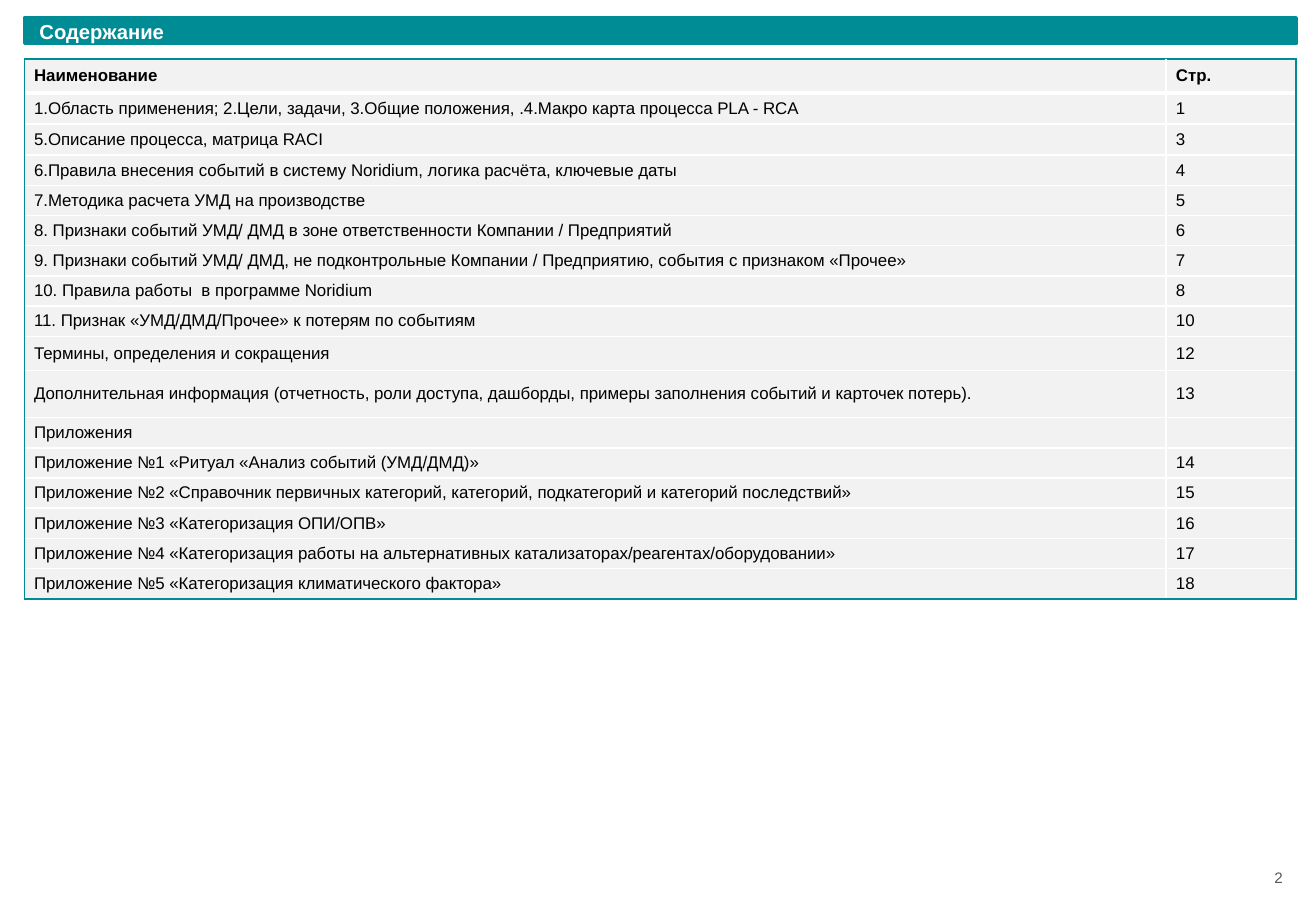
from typing import NamedTuple

from lxml.etree import SubElement
from pptx import Presentation
from pptx.dml.color import RGBColor
from pptx.enum.shapes import MSO_SHAPE
from pptx.enum.text import MSO_ANCHOR, PP_ALIGN
from pptx.oxml.ns import qn
from pptx.util import Pt

TEAL = RGBColor(0x00, 0x8C, 0x95)
PALE = RGBColor(0xF2, 0xF2, 0xF2)
WHITE = RGBColor(0xFF, 0xFF, 0xFF)
BLACK = RGBColor(0x00, 0x00, 0x00)
GREY = RGBColor(0x59, 0x59, 0x59)

LEFT, TABLE_TOP, WIDTH = 14.4, 34.8, 753.8
COLUMN_WIDTHS = (676.8, 77)
LINE_ROW = 17.9


class Entry(NamedTuple):
    name: str
    number: str
    height: float = LINE_ROW


class Edge(NamedTuple):
    color: RGBColor
    width: float


class Edges(NamedTuple):
    left: Edge
    right: Edge
    top: Edge
    bottom: Edge


HAIRLINE = Edge(TEAL, 0.25)
FRAME = Edge(TEAL, 1)
GRID = Edge(WHITE, 1)
HEADER_RULE = Edge(WHITE, 3)
CLOSING_RULE = Edge(BLACK, 1)

ENTRIES = [
    Entry("Наименование", "Стр.", 20.4),
    Entry("1.Область применения; 2.Цели, задачи, 3.Общие положения, "
          ".4.Макро карта процесса PLA - RCA", "1", 18.4),
    Entry("5.Описание процесса, матрица RACI", "3", 18.4),
    Entry("6.Правила внесения событий в систему Noridium, логика расчёта, ключевые даты", "4"),
    Entry("7.Методика расчета УМД на производстве", "5"),
    Entry("8. Признаки событий УМД/ ДМД в зоне ответственности Компании / Предприятий", "6"),
    Entry("9. Признаки событий УМД/ ДМД, не подконтрольные Компании / Предприятию, "
          "события с признаком «Прочее»", "7"),
    Entry("10. Правила работы  в программе Noridium", "8"),
    Entry("11. Признак «УМД/ДМД/Прочее» к потерям по событиям", "10"),
    Entry("Термины, определения и сокращения", "12", 20.4),
    Entry("Дополнительная информация (отчетность, роли доступа, дашборды, "
          "примеры заполнения событий и карточек потерь).", "13", 27.9),
    Entry("Приложения", ""),
    Entry("Приложение №1 «Ритуал «Анализ событий (УМД/ДМД)»", "14"),
    Entry("Приложение №2 «Справочник первичных категорий, категорий, подкатегорий "
          "и категорий последствий»", "15"),
    Entry("Приложение №3 «Категоризация ОПИ/ОПВ»", "16"),
    Entry("Приложение №4 «Категоризация работы на альтернативных "
          "катализаторах/реагентах/оборудовании»", "17"),
    Entry("Приложение №5 «Категоризация климатического фактора»", "18"),
]
TABLE_HEIGHT = sum(entry.height for entry in ENTRIES)


def set_all(target, values: dict) -> None:
    for name, value in values.items():
        setattr(target, name, value)


def write(frame, text: str, size: float, color: RGBColor, bold: bool = False,
          align: PP_ALIGN = PP_ALIGN.LEFT) -> None:
    para = frame.paragraphs[0]
    para.alignment = align
    set_all(para.font, {"name": "Arial", "size": Pt(size), "bold": bold})
    para.font.color.rgb = color
    if text:
        span = para.add_run()
        span.text = text
        set_all(span.font, {"name": "Arial", "size": Pt(size), "bold": bold})
        span.font.color.rgb = color


def set_edges(cell, edges: Edges) -> None:
    """Draw the four cell borders; they must precede the fill in the XML."""
    properties = cell._tc.get_or_add_tcPr()
    for index, (tag, edge) in enumerate(zip(("a:lnL", "a:lnR", "a:lnT", "a:lnB"), edges)):
        line = SubElement(properties, qn(tag), w=str(Pt(edge.width)))
        SubElement(SubElement(line, qn("a:solidFill")), qn("a:srgbClr"), val=str(edge.color))
        properties.insert(index, line)


def add_plain_table(page, rows: int, columns: int):
    table = page.shapes.add_table(rows, columns, Pt(LEFT), Pt(TABLE_TOP),
                                  Pt(WIDTH), Pt(TABLE_HEIGHT)).table
    set_all(table, {"first_row": False, "horz_banding": False})
    return table


def add_title(page) -> None:
    bar = page.shapes.add_shape(MSO_SHAPE.RECTANGLE, Pt(LEFT), Pt(10.8), Pt(WIDTH), Pt(15.2))
    bar.shadow.inherit = False
    bar.fill.solid()
    bar.fill.fore_color.rgb = TEAL
    bar.line.color.rgb = TEAL
    bar.line.width = Pt(2)
    set_all(bar.text_frame, {"margin_left": Pt(9), "margin_top": Pt(0), "margin_bottom": Pt(0),
                             "vertical_anchor": MSO_ANCHOR.MIDDLE, "word_wrap": True})
    write(bar.text_frame, "Содержание", 12, WHITE, bold=True)


def add_contents(page) -> None:
    table = add_plain_table(page, len(ENTRIES), len(COLUMN_WIDTHS))
    for column, width in zip(table.columns, COLUMN_WIDTHS):
        column.width = Pt(width)
    last = len(ENTRIES) - 1
    for row, entry in enumerate(ENTRIES):
        table.rows[row].height = Pt(entry.height)
        top = HAIRLINE if row == 0 else HEADER_RULE if row == 1 else GRID
        bottom = HEADER_RULE if row == 0 else CLOSING_RULE if row == last else GRID
        for column, text in enumerate((entry.name, entry.number)):
            cell = table.cell(row, column)
            set_all(cell, {"margin_left": Pt(5.8), "margin_right": Pt(5.8),
                           "margin_top": Pt(2.9), "margin_bottom": Pt(2.9),
                           "vertical_anchor": MSO_ANCHOR.MIDDLE})
            cell.fill.solid()
            cell.fill.fore_color.rgb = PALE
            sides = (HAIRLINE, GRID) if column == 0 else (GRID, HAIRLINE)
            set_edges(cell, Edges(*sides, top, bottom))
            write(cell.text_frame, text, 10, BLACK, bold=row == 0)


def add_frame(page) -> None:
    cell = add_plain_table(page, 1, 1).cell(0, 0)
    cell.fill.background()
    set_edges(cell, Edges(FRAME, FRAME, FRAME, FRAME))


def add_page_number(page) -> None:
    box = page.shapes.add_textbox(Pt(722.9), Pt(501.1), Pt(37.4), Pt(24.5))
    set_all(box.text_frame, {"margin_left": 0, "margin_right": 0, "margin_top": 0,
                             "margin_bottom": 0, "word_wrap": True,
                             "vertical_anchor": MSO_ANCHOR.BOTTOM})
    write(box.text_frame, "2", 9, GREY, align=PP_ALIGN.RIGHT)


def main() -> None:
    deck = Presentation()
    set_all(deck, {"slide_width": Pt(780), "slide_height": Pt(540)})
    page = deck.slides.add_slide(deck.slide_layouts[6])
    add_page_number(page)
    add_title(page)
    add_contents(page)
    add_frame(page)
    deck.save("out.pptx")


if __name__ == "__main__":
    main()
